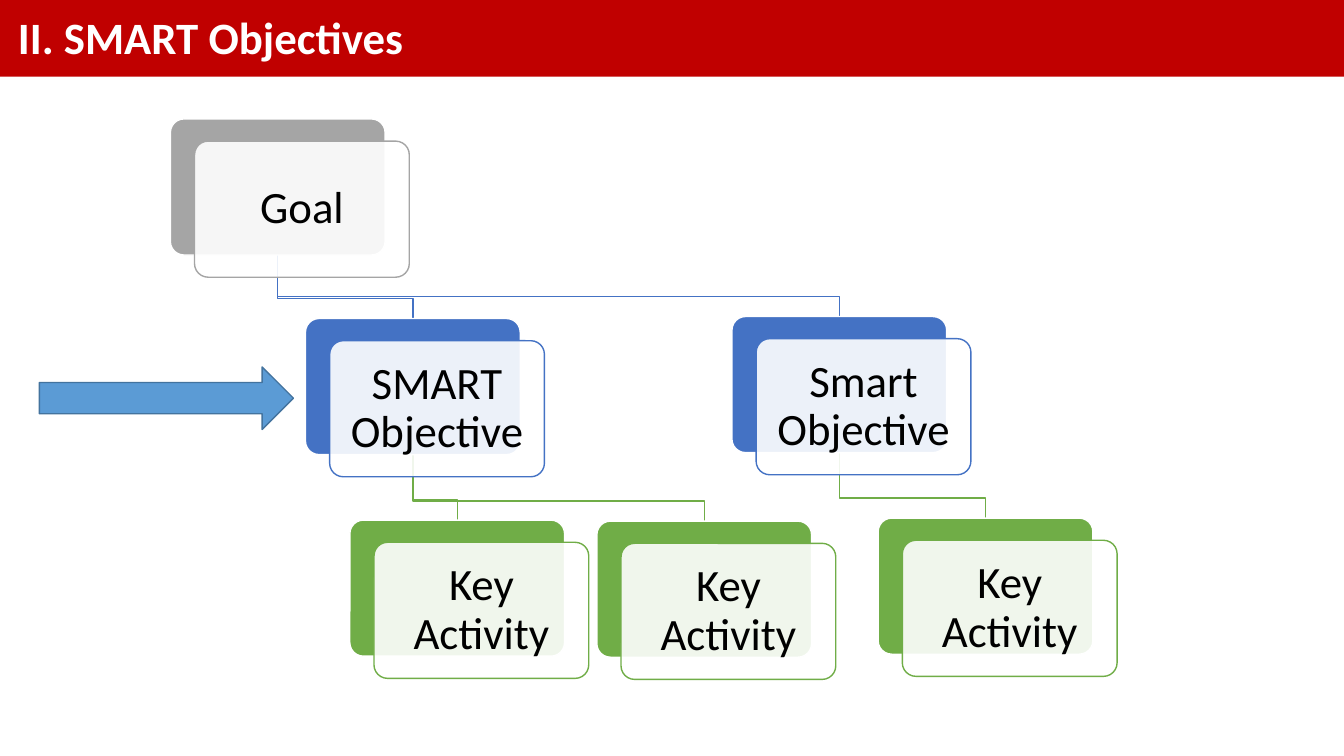
from lxml import etree
from pptx import Presentation
from pptx import util as u
from pptx.dml.color import RGBColor
from pptx.enum import shapes, text
from pptx.oxml.ns import qn

COLORS = {"red": "C00000", "white": "FFFFFF", "black": "000000", "gray": "A5A5A5",
          "blue": "4472C4", "green": "70AD47", "arrow": "5B9BD5", "arrow_line": "43739E"}
NODE_W, NODE_H = 2.13, 1.35
CARD_DX, CARD_DY = 0.24, 0.22  # card's shift from the block behind it
TEXT_PAD = 0.04
ELBOW_RISE = 0.2  # height of an elbow above the child

# name: label, left, top, colour
NODES = {
    "goal": ("Goal", 1.69, 1.18, "gray"),
    "left": ("SMART Objective", 3.03, 3.16, "blue"),
    "left_a": ("Key Activity", 3.47, 5.16, "green"),
    "left_b": ("Key Activity", 5.92, 5.17, "green"),
    "right": ("Smart Objective", 7.26, 3.14, "blue"),
    "right_a": ("Key Activity", 8.71, 5.14, "green"),
}
LINKS = [("right", "right_a"), ("goal", "right"), ("left", "left_b"),
         ("left", "left_a"), ("goal", "left")]


def write(tf, words, color="black", bold=False, align=text.PP_ALIGN.CENTER, margins=(0.13, 0.13)):
    tf.word_wrap = True
    tf.vertical_anchor = text.MSO_ANCHOR.MIDDLE
    tf.margin_left = tf.margin_right = u.Inches(margins[0])
    tf.margin_top = tf.margin_bottom = u.Inches(margins[1])
    p = tf.paragraphs[0]
    p.alignment = align
    p.line_spacing = 0.9
    r = p.add_run()
    r.text = words
    r.font.name = "Calibri"
    r.font.size = u.Pt(32)
    r.font.bold = bold
    r.font.color.rgb = RGBColor.from_string(COLORS[color])


class Deck:
    def __init__(self):
        self.prs = Presentation()
        self.prs.slide_width = u.Inches(13.33)
        self.prs.slide_height = u.Inches(7.5)
        self.s = self.prs.slides.add_slide(self.prs.slide_layouts[6])

    def outline(self, sp, color):
        sp.shadow.inherit = False
        if color:
            sp.line.color.rgb = RGBColor.from_string(COLORS[color])
            sp.line.width = u.Pt(1)
        else:
            sp.line.fill.background()

    def shape(self, kind, x, y, w, h, fill, line=None, adj=None, alpha=None):
        sp = self.s.shapes.add_shape(kind, *map(u.Inches, (x, y, w, h)))
        sp.fill.solid()
        sp.fill.fore_color.rgb = RGBColor.from_string(COLORS[fill])
        self.outline(sp, line)
        if adj is not None:
            sp.adjustments[0] = adj
        if alpha is not None:
            clr = sp._element.spPr.find(qn("a:solidFill"))[0]
            etree.SubElement(clr, qn("a:alpha")).set("val", str(alpha * 1000))
        return sp

    def label(self, x, y, w, h, words, **fmt):
        sp = self.s.shapes.add_textbox(*map(u.Inches, (x, y, w, h)))
        write(sp.text_frame, words, **fmt)

    def link(self, parent, child):
        _, px, py, _ = NODES[parent]
        _, cx, cy, color = NODES[child]
        x1, x2, turn = px + NODE_W / 2, cx + NODE_W / 2, cy - ELBOW_RISE
        points = [(x1, py + NODE_H), (x1, turn), (x2, turn), (x2, cy)]
        start, *rest = [(u.Inches(x), u.Inches(y)) for x, y in points]
        fb = self.s.shapes.build_freeform(*start)
        fb.add_line_segments(rest, close=False)
        sp = fb.convert_to_shape()
        sp.fill.background()
        self.outline(sp, color)

    def node(self, words, x, y, color):
        rounded = shapes.MSO_SHAPE.ROUNDED_RECTANGLE
        self.shape(rounded, x, y, NODE_W, NODE_H, color, "white", adj=0.1)
        x, y = x + CARD_DX, y + CARD_DY
        self.shape(rounded, x, y, NODE_W, NODE_H, "white", color, adj=0.1, alpha=90)
        self.label(x + TEXT_PAD, y + TEXT_PAD, NODE_W - 2 * TEXT_PAD, NODE_H - 2 * TEXT_PAD, words)


def main():
    deck = Deck()

    # Title bar
    deck.shape(shapes.MSO_SHAPE.RECTANGLE, 0, 0, 13.33, 0.76, "red")
    deck.label(0.08, 0.17, 12.99, 0.45, "II. SMART Objectives", color="white", bold=True,
               align=text.PP_ALIGN.LEFT, margins=(0.1, 0.05))

    # Hierarchy: links behind the nodes
    for parent, child in LINKS:
        deck.link(parent, child)
    for node in NODES.values():
        deck.node(*node)

    # Arrow to the first objective
    deck.shape(shapes.MSO_SHAPE.RIGHT_ARROW, 0.39, 3.64, 2.52, 0.62, "arrow", "arrow_line")

    deck.prs.save("out.pptx")


if __name__ == "__main__":
    main()
